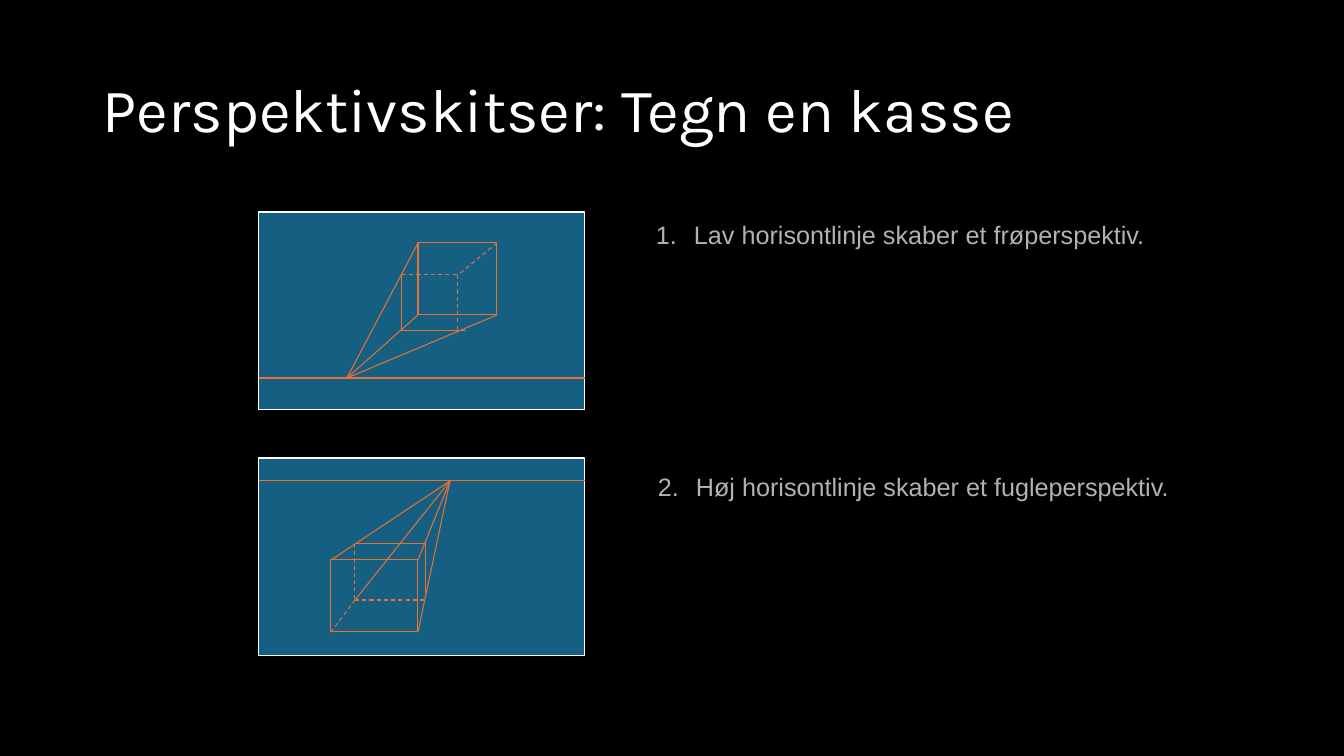
from lxml import etree
from pptx import Presentation, util as u
from pptx.dml.color import RGBColor
from pptx.enum import dml, shapes, text
from pptx.oxml.ns import qn

BLACK = RGBColor(0x00, 0x00, 0x00)
WHITE = RGBColor(0xFF, 0xFF, 0xFF)
BLUE = RGBColor(0x15, 0x60, 0x82)
ORANGE = RGBColor(0xE9, 0x71, 0x32)
GREY = RGBColor(0xB2, 0xB2, 0xB2)

WIDTH, HEIGHT = 1344, 756
EMU_PER_PX = 914400 / 100.8
LINE_PT = 0.75
INDENT = 38

TITLE = ("Perspektivskitser: Tegn en kasse", (93, 40, 1159, 146))
TITLE_FONT = {"name": "Karla", "size": u.Pt(44), "color": WHITE}
NOTE_FONT = {"name": "Arial", "size": u.Pt(18), "color": GREY}
PANEL_LEFT, PANEL_W, PANEL_H = 259, 326, 198

SKETCHES = [
    {
        "panel_top": 212,
        "horizon": 378,
        "front": (418, 243, 79, 72),
        "vanishing": (347, 378),
        "rays": [(418, 243), (418, 315), (497, 315)],
        "solid": [((402, 275), (402, 331)), ((402, 331), (466, 331))],
        "dashed": [((402, 275), (458, 275)), ((458, 275), (458, 331)),
                   ((497, 243), (458, 275))],
        "note": "Lav horisontlinje skaber et frøperspektiv.",
        "note_box": (646, 214, 513, 40),
    },
    {
        "panel_top": 458,
        "horizon": 481,
        "front": (331, 560, 87, 72),
        "vanishing": (450, 481),
        "rays": [(331, 560), (418, 560), (418, 632), (355, 600)],
        "solid": [((355, 544), (426, 544)), ((426, 544), (426, 593))],
        "dashed": [((355, 600), (331, 632)), ((355, 544), (355, 600)),
                   ((355, 600), (426, 600))],
        "note": "Høj horisontlinje skaber et fugleperspektiv.",
        "note_box": (648, 466, 546, 72),
    },
]


def px(*values):
    return [u.Emu(round(v * EMU_PER_PX)) for v in values]


def set_font(font, formats):
    for key, value in formats.items():
        if key == "color":
            font.color.rgb = value
        else:
            setattr(font, key, value)


def add_rect(s, box, line, fill=None):
    sp = s.shapes.add_shape(shapes.MSO_SHAPE.RECTANGLE, *px(*box))
    sp.shadow.inherit = False
    if fill is None:
        sp.fill.background()
    else:
        sp.fill.solid()
        sp.fill.fore_color.rgb = fill
    sp.line.color.rgb = line
    sp.line.width = u.Pt(LINE_PT)


def add_line(s, start, end, dashed=False):
    ln = s.shapes.add_connector(shapes.MSO_CONNECTOR.STRAIGHT, *px(*start, *end))
    ln.line.color.rgb = ORANGE
    ln.line.width = u.Pt(LINE_PT)
    if dashed:
        ln.line.dash_style = dml.MSO_LINE.DASH
    etree.SubElement(ln._element.spPr, qn("a:effectLst"))


def add_text(s, words, box, formats):
    tf = s.shapes.add_textbox(*px(*box)).text_frame
    p = tf.paragraphs[0]
    r = p.add_run()
    r.text = words
    set_font(r.font, formats)
    return tf, p


def add_title(s):
    tf, p = add_text(s, *TITLE, TITLE_FONT)
    tf.word_wrap = True
    tf.vertical_anchor = text.MSO_ANCHOR.MIDDLE
    p.line_spacing = 0.9


def add_note(s, number, words, box):
    tf, p = add_text(s, words, box, NOTE_FONT)
    tf.word_wrap = False
    tf.auto_size = text.MSO_AUTO_SIZE.SHAPE_TO_FIT_TEXT
    indent = px(INDENT)[0]
    pPr = p._p.get_or_add_pPr()
    pPr.set("marL", str(indent))
    pPr.set("indent", str(-indent))
    etree.SubElement(pPr, qn("a:buFont"), typeface="+mj-lt")
    etree.SubElement(pPr, qn("a:buAutoNum"), type="arabicPeriod", startAt=str(number))


def add_sketch(s, number, sketch):
    y = sketch["horizon"]
    add_rect(s, (PANEL_LEFT, sketch["panel_top"], PANEL_W, PANEL_H), WHITE, BLUE)
    add_line(s, (PANEL_LEFT, y), (PANEL_LEFT + PANEL_W, y))
    add_rect(s, sketch["front"], ORANGE)
    for corner in sketch["rays"]:
        add_line(s, corner, sketch["vanishing"])
    for edge in sketch["solid"]:
        add_line(s, *edge)
    for edge in sketch["dashed"]:
        add_line(s, *edge, dashed=True)
    add_note(s, number, sketch["note"], sketch["note_box"])


def main():
    prs = Presentation()
    prs.slide_width, prs.slide_height = px(WIDTH, HEIGHT)
    s = prs.slides.add_slide(prs.slide_layouts[6])
    s.background.fill.solid()
    s.background.fill.fore_color.rgb = BLACK
    add_title(s)
    for number, sketch in enumerate(SKETCHES, 1):
        add_sketch(s, number, sketch)
    prs.save("out.pptx")


if __name__ == "__main__":
    main()
